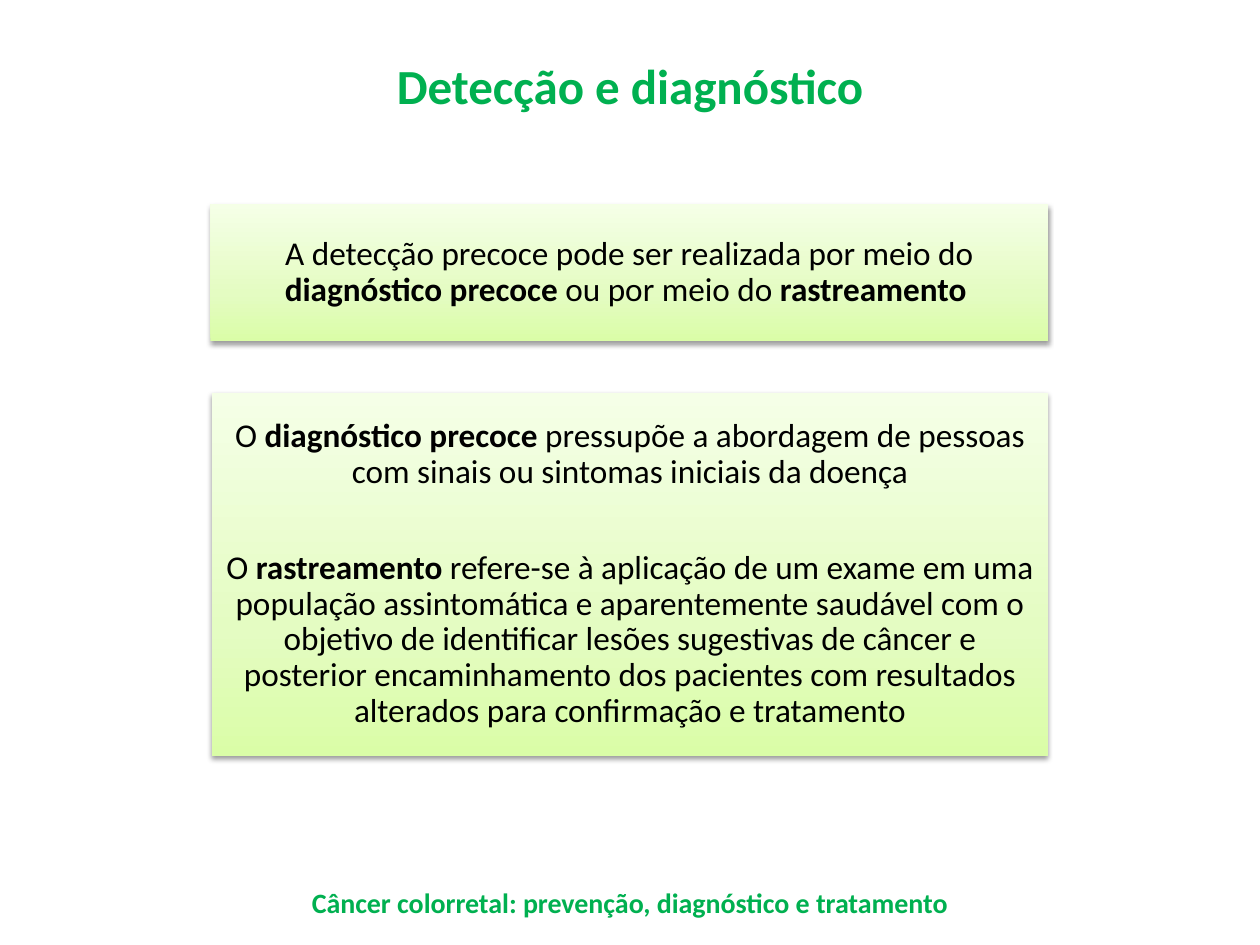
import pptx
import pptx.dml.color
import pptx.enum.shapes
import pptx.enum.text
import pptx.oxml
import pptx.oxml.ns
import pptx.util
from pptx.util import Inches

RGBColor = pptx.dml.color.RGBColor
GREEN = RGBColor(0x00, 0xB0, 0x50)
BLACK = RGBColor(0x00, 0x00, 0x00)
LIME_DARK = RGBColor(0xDA, 0xFD, 0xA7)
LIME_MID = RGBColor(0xE4, 0xFC, 0xC2)
LIME_LIGHT = RGBColor(0xF5, 0xFF, 0xE7)

NS = pptx.oxml.ns.nsdecls("a")
QN = pptx.oxml.ns.qn
ANCHOR = pptx.enum.text.MSO_ANCHOR


class Deck:
    font = "Calibri"
    stops = [(0, LIME_DARK), (35, LIME_MID), (100, LIME_LIGHT)]

    def __init__(self, width, height):
        self.prs = pptx.Presentation()
        self.prs.slide_width = Inches(width)
        self.prs.slide_height = Inches(height)
        self.s = self.prs.slides.add_slide(self.prs.slide_layouts[6])

    def format_run(self, r, size, color, bold):
        r.font.name = self.font
        r.font.size = pptx.util.Pt(size)
        r.font.color.rgb = color
        r.font.bold = bold

    def heading(self, text, x, y, w, h, size, anchor):
        sp = self.s.shapes.add_textbox(Inches(x), Inches(y), Inches(w), Inches(h))
        tf = sp.text_frame
        tf.word_wrap = True
        tf.vertical_anchor = anchor
        tf.text = text
        p = tf.paragraphs[0]
        p.alignment = pptx.enum.text.PP_ALIGN.CENTER
        self.format_run(p.runs[0], size, GREEN, True)

    def gradient(self, sp):
        sp.fill.gradient()
        sp.fill.gradient_angle = 90
        gs_list = sp.fill._xPr.find(".//" + QN("a:gsLst"))
        gs_list.clear()
        for pos, color in self.stops:
            gs_list.append(pptx.oxml.parse_xml(
                f'<a:gs {NS} pos="{pos * 1000}"><a:srgbClr val="{color}"/></a:gs>'))

    def soft_shadow(self, sp):
        sp.shadow.inherit = False
        effects = sp._element.spPr.find(QN("a:effectLst"))
        effects.append(pptx.oxml.parse_xml(
            f'<a:outerShdw {NS} blurRad="39370" dist="20320" dir="5400000" rotWithShape="0">'
            '<a:srgbClr val="000000"><a:alpha val="38000"/></a:srgbClr></a:outerShdw>'))

    def panel(self, paragraphs, x, y, w, h, size=19, gap=34):
        """Gradient box; ** in a paragraph switches bold on and off."""
        sp = self.s.shapes.add_shape(pptx.enum.shapes.MSO_SHAPE.RECTANGLE,
                                     Inches(x), Inches(y), Inches(w), Inches(h))
        self.gradient(sp)
        self.soft_shadow(sp)
        sp.line.fill.background()
        tf = sp.text_frame
        tf.word_wrap = True
        tf.vertical_anchor = ANCHOR.MIDDLE
        tf.margin_left = tf.margin_right = Inches(0.08)
        tf.margin_top = tf.margin_bottom = Inches(0.08)
        for i, text in enumerate(paragraphs):
            p = tf.add_paragraph() if i else tf.paragraphs[0]
            p.alignment = pptx.enum.text.PP_ALIGN.CENTER
            p.line_spacing = 0.9
            if i:
                p.space_before = pptx.util.Pt(gap)
            for j, part in enumerate(text.split("**")):
                if part:
                    r = p.add_run()
                    r.text = part
                    self.format_run(r, size, BLACK, j % 2 == 1)


def main():
    deck = Deck(10, 7.5)

    # Title and footer
    deck.heading("Detecção e diagnóstico", 0.5, 0.05, 9, 1.25, 28, ANCHOR.MIDDLE)
    deck.heading("Câncer colorretal: prevenção, diagnóstico e tratamento",
                 0.12, 6.98, 9.76, 0.44, 16, ANCHOR.TOP)

    # Statement
    deck.panel(["A detecção precoce pode ser realizada por meio do "
                "**diagnóstico precoce** ou por meio do **rastreamento **"],
               1.67, 1.62, 6.65, 1.09)

    # Definitions
    deck.panel(["O **diagnóstico precoce** pressupõe a abordagem de pessoas "
                "com sinais ou sintomas iniciais da doença",
                "O **rastreamento** refere-se à aplicação de um exame em uma "
                "população assintomática e aparentemente saudável com o objetivo "
                "de identificar lesões sugestivas de câncer e posterior "
                "encaminhamento dos pacientes com resultados alterados para "
                "confirmação e tratamento"],
               1.68, 3.12, 6.64, 2.88)

    deck.prs.save("out.pptx")


if __name__ == "__main__":
    main()
